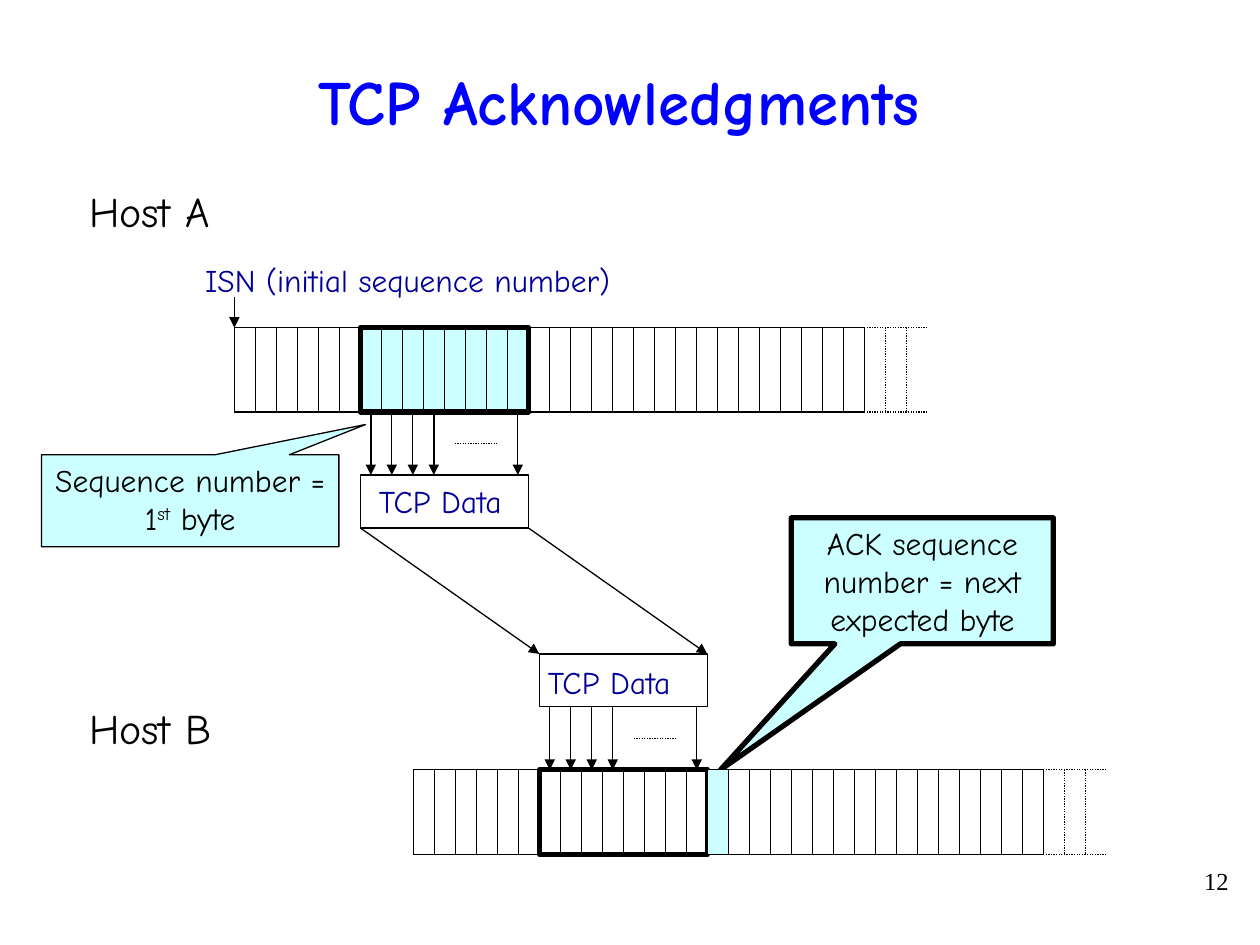
"""Build the TCP acknowledgments slide."""
from lxml import etree
from pptx import Presentation
from pptx.dml.color import RGBColor
from pptx.enum import dml, shapes, text
from pptx.oxml import ns
from pptx.util import Inches, Pt

CELL = 1 / 6
CELL_HEIGHT = 0.67
SEGMENT_START, SEGMENT_CELLS = 6, 8
SOLID_CELLS, DOTTED_CELLS = 30, 2
SEGMENT_WIDTH = SEGMENT_CELLS * CELL
DATA_HEIGHT = 0.42
ARROW_CELLS = (0, 1, 2, 3, 7)


def color(value):
    return RGBColor.from_string(value)


class SlideBuilder:
    """Hold the style and the current slide, and draw its elements."""

    font = "Comic Neue"
    black, white, blue, navy, aqua = "000000", "FFFFFF", "0000FF", "000099", "CCFFFF"

    def __init__(self, slide):
        self.slide = slide

    def style(self, paragraph, size, tint, align=None, font=None):
        paragraph.alignment = align
        paragraph.font.size = Pt(size)
        paragraph.font.name = font or self.font
        paragraph.font.color.rgb = color(tint)

    def title(self, words, left, top, width, height):
        heading = self.slide.shapes.title
        heading.left, heading.top = Inches(left), Inches(top)
        heading.width, heading.height = Inches(width), Inches(height)
        heading.text_frame.text = words
        heading.text_frame.vertical_anchor = text.MSO_ANCHOR.MIDDLE
        paragraph = heading.text_frame.paragraphs[0]
        self.style(paragraph, 36, self.blue, text.PP_ALIGN.CENTER)
        paragraph.font.bold = True

    def label(self, words, left, top, width, height, size=18, tint=navy,
              wrap=False, align=None, font=None):
        frame = self.slide.shapes.add_textbox(
            Inches(left), Inches(top), Inches(width), Inches(height)).text_frame
        frame.word_wrap = wrap
        frame.text = words
        self.style(frame.paragraphs[0], size, tint, align, font)

    def box(self, left, top, width, height, fill=None, weight=0.75,
            kind=shapes.MSO_SHAPE.RECTANGLE):
        shape = self.slide.shapes.add_shape(
            kind, Inches(left), Inches(top), Inches(width), Inches(height))
        shape.shadow.inherit = False
        if fill:
            shape.fill.solid()
            shape.fill.fore_color.rgb = color(fill)
        else:
            shape.fill.background()
        shape.line.color.rgb = color(self.black)
        shape.line.width = Pt(weight)
        return shape

    def callout(self, parts, left, top, width, height, tip, weight=0.75):
        bubble = self.box(left, top, width, height, self.aqua, weight,
                          shapes.MSO_SHAPE.RECTANGULAR_CALLOUT)
        bubble.adjustments[0], bubble.adjustments[1] = tip
        frame = bubble.text_frame
        frame.word_wrap = True
        frame.vertical_anchor = text.MSO_ANCHOR.TOP
        paragraph = frame.paragraphs[0]
        self.style(paragraph, 18, self.black, text.PP_ALIGN.CENTER)
        for words, raised in parts:
            run = paragraph.add_run()
            run.text = words
            if raised:
                run.font._element.set("baseline", "30000")

    def line(self, x1, y1, x2, y2, dotted=False, arrow=False):
        connector = self.slide.shapes.add_connector(
            shapes.MSO_CONNECTOR.STRAIGHT,
            Inches(x1), Inches(y1), Inches(x2), Inches(y2))
        connector.line.color.rgb = color(self.black)
        connector.line.width = Pt(0.75)
        if dotted:
            connector.line.dash_style = dml.MSO_LINE.ROUND_DOT
        properties = connector._element.spPr
        if arrow:
            outline = properties.find(ns.qn("a:ln"))
            etree.SubElement(outline, ns.qn("a:tailEnd"), type="triangle")
        etree.SubElement(properties, ns.qn("a:effectLst"))

    def byte_stream(self, left, top):
        bottom = top + CELL_HEIGHT
        solid_end = left + SOLID_CELLS * CELL
        for y in (top, bottom):
            self.line(left, y, solid_end, y)
            self.line(solid_end + 0.5, y, solid_end, y, dotted=True)
        for index in range(SOLID_CELLS + DOTTED_CELLS + 1):
            x = left + index * CELL
            self.line(x, top, x, bottom, dotted=index > SOLID_CELLS)

    def byte_arrows(self, left, top, bottom):
        for index in ARROW_CELLS:
            x = left + (index + 0.5) * CELL
            self.line(x, top, x, bottom, arrow=True)
        middle = (top + bottom) / 2
        self.line(left + 4.5 * CELL, middle, left + 6.5 * CELL, middle, dotted=True)


def main():
    presentation = Presentation()
    presentation.slide_width, presentation.slide_height = Inches(10), Inches(7.5)
    builder = SlideBuilder(presentation.slides.add_slide(presentation.slide_layouts[5]))

    stream_a, stream_a_top = 1.86, 2.6
    stream_b, stream_b_top = 3.28, 6.11
    segment_a = stream_a + SEGMENT_START * CELL
    segment_b = stream_b + SEGMENT_START * CELL
    data_a_top, data_b_top = 3.77, 5.19
    stream_a_bottom = stream_a_top + CELL_HEIGHT
    data_a_bottom = data_a_top + DATA_HEIGHT

    builder.box(segment_a, stream_a_top, SEGMENT_WIDTH, CELL_HEIGHT, builder.aqua, 3)
    builder.title("TCP Acknowledgments", 0.33, 0.42, 9.17, 0.75)
    builder.byte_stream(stream_a, stream_a_top)
    builder.byte_stream(stream_b, stream_b_top)
    for host, top in (("Host A", 1.42), ("Host B", 5.53)):
        builder.label(host, 0.61, top, 1.3, 0.51, 24, builder.black)

    for segment, top in ((segment_a, data_a_top), (segment_b, data_b_top)):
        builder.box(segment, top, SEGMENT_WIDTH, DATA_HEIGHT, builder.white)
    for offset in (0, SEGMENT_WIDTH):
        builder.line(segment_a + offset, data_a_bottom,
                     segment_b + offset, data_b_top, arrow=True)
    builder.byte_arrows(segment_a, stream_a_bottom, data_a_top)
    builder.byte_arrows(segment_b, data_b_top + DATA_HEIGHT, stream_b_top)
    for left, top in ((2.91, 3.78), (4.25, 5.21)):
        builder.label("TCP Data", left, top, 1.3, 0.4)

    builder.label("ISN (initial sequence number)", 1.53, 2.02, 3.68, 0.4)
    builder.line(stream_a, 2.36, stream_a, stream_a_top, arrow=True)
    builder.callout([("Sequence number = 1", False), ("st", True), (" byte", False)],
                    0.33, 3.61, 2.36, 0.73, (0.59, -0.83))
    builder.box(segment_b, stream_b_top, SEGMENT_WIDTH, CELL_HEIGHT, weight=3)
    builder.callout([("ACK sequence number = next expected byte", False)],
                    6.28, 4.11, 2.08, 1, (-0.77, 1.5), weight=3)
    builder.box(segment_b + SEGMENT_WIDTH, stream_b_top, CELL, CELL_HEIGHT, builder.aqua)
    builder.label("12", 7.52, 6.82, 2.33, 0.52, 14, builder.black, wrap=True,
                  align=text.PP_ALIGN.RIGHT, font="Times New Roman")
    presentation.save("out.pptx")


if __name__ == "__main__":
    main()
